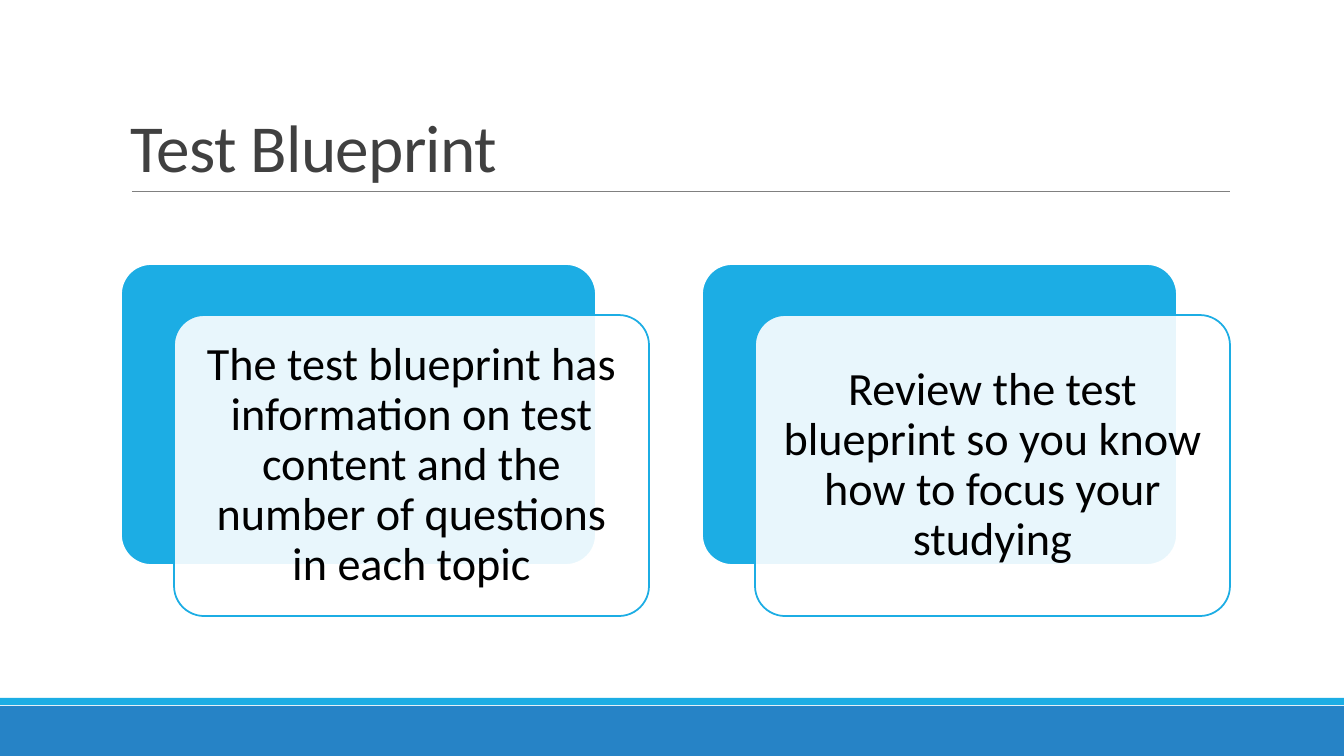
from dataclasses import dataclass

from lxml.etree import SubElement
from pptx import Presentation
from pptx.dml.color import RGBColor
from pptx.enum.shapes import MSO_CONNECTOR, MSO_SHAPE
from pptx.enum.text import MSO_ANCHOR, PP_ALIGN
from pptx.oxml.ns import qn
from pptx.util import Pt


@dataclass(frozen=True)
class Theme:
    font: str = "Calibri"
    title_size: int = 48
    card_size: int = 33
    title: str = "404040"
    text: str = "000000"
    rule: str = "808080"
    accent: str = "1CADE4"
    footer: str = "2683C6"
    white: str = "FFFFFF"


theme = Theme()
SCALE = 914400 / 100.8


def px(*lengths):
    return [round(length * SCALE) for length in lengths]


def add_block(preset, box, fill, outline=None):
    block = slide.shapes.add_shape(preset, *px(*box))
    block.shadow.inherit = False
    block.fill.solid()
    block.fill.fore_color.rgb = RGBColor.from_string(fill)
    if outline:
        block.adjustments[0] = 0.1
        block.line.color.rgb = RGBColor.from_string(outline)
        block.line.width = Pt(1.25)
    else:
        block.line.fill.background()
    return block


presentation = Presentation()
presentation.slide_width, presentation.slide_height = px(1344, 756)
slide = presentation.slides.add_slide(presentation.slide_layouts[6])

add_block(MSO_SHAPE.RECTANGLE, (0, 706, 1344, 50), theme.footer)
add_block(MSO_SHAPE.RECTANGLE, (0, 698, 1344, 7), theme.accent)

title_rule = slide.shapes.add_connector(MSO_CONNECTOR.STRAIGHT, *px(132, 191, 1230, 191))
title_rule.line.color.rgb = RGBColor.from_string(theme.rule)
title_rule.line.width = Pt(0.5)
SubElement(title_rule._element.spPr, qn("a:effectLst"))

title = slide.shapes.add_textbox(*px(121, 31, 1109, 160)).text_frame
title.word_wrap = True
title.vertical_anchor = MSO_ANCHOR.BOTTOM
heading = title.paragraphs[0]
heading.line_spacing = 0.85
heading.font.name = theme.font
heading.font.size = Pt(theme.title_size)
heading.font.color.rgb = RGBColor.from_string(theme.title)
heading_run = heading.add_run()
heading_run.text = "Test Blueprint"
heading_run._r.get_or_add_rPr().set("spc", "-50")

messages = [
    "The test blueprint has information on test content and the number of questions in each topic",
    "Review the test blueprint so you know how to focus your studying",
]
for index, message in enumerate(messages):
    left = 121 + 581 * index
    add_block(MSO_SHAPE.ROUNDED_RECTANGLE, (left, 264, 475, 301), theme.accent, theme.white)
    card = add_block(
        MSO_SHAPE.ROUNDED_RECTANGLE, (left + 53, 315, 475, 301), theme.white, theme.accent
    )
    card_color = card._element.spPr.find(qn("a:solidFill"))[0]
    SubElement(card_color, qn("a:alpha"), val="90000")

    frame = card.text_frame
    frame.word_wrap = True
    frame.vertical_anchor = MSO_ANCHOR.MIDDLE
    frame.margin_left, frame.margin_top, frame.margin_right, frame.margin_bottom = px(*[14] * 4)
    statement = frame.paragraphs[0]
    statement.text = message
    statement.alignment = PP_ALIGN.CENTER
    statement.line_spacing = 0.9
    statement.font.name = theme.font
    statement.font.size = Pt(theme.card_size)
    statement.font.color.rgb = RGBColor.from_string(theme.text)

presentation.save("out.pptx")
